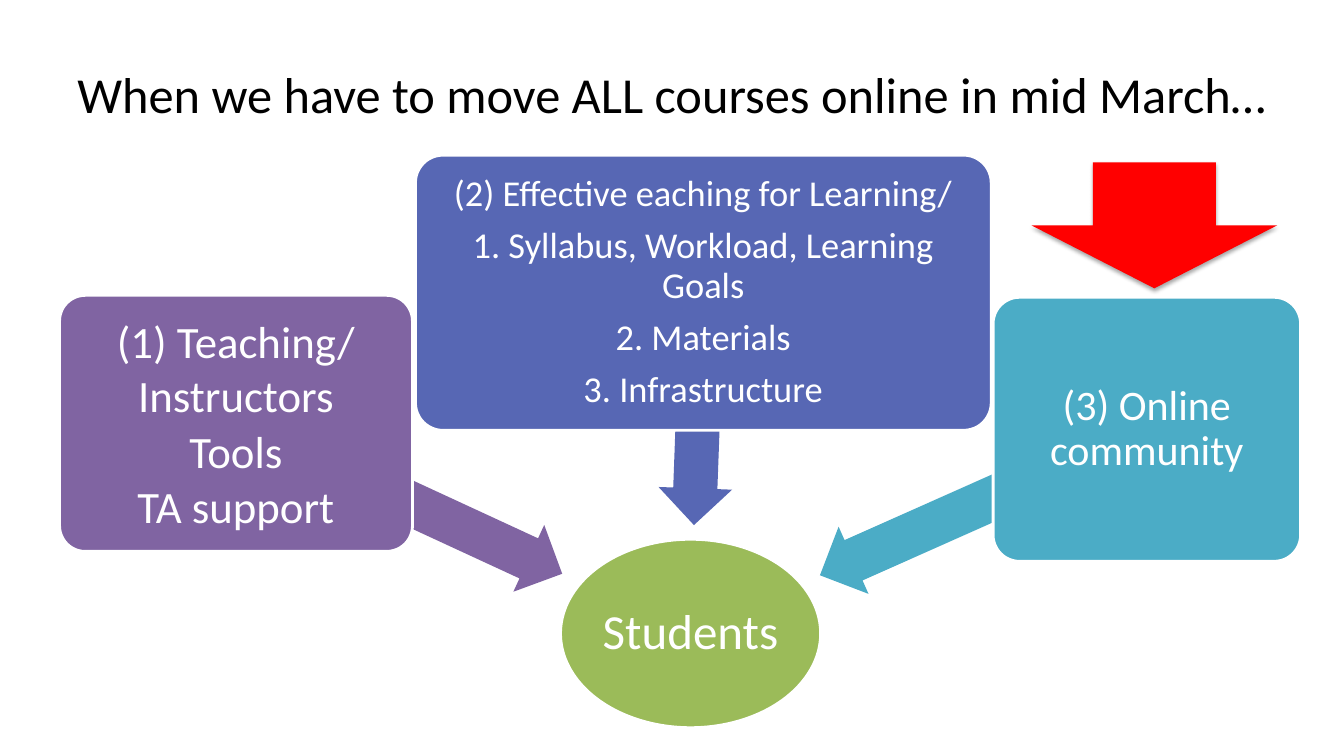
from lxml.etree import SubElement
from pptx import Presentation
from pptx.dml.color import RGBColor
from pptx.enum.shapes import MSO_SHAPE
from pptx.enum.text import MSO_ANCHOR, PP_ALIGN
from pptx.oxml.ns import qn
from pptx.util import Inches, Pt

WIDTH, HEIGHT = Inches(13.33), Inches(7.5)
FONT = "Calibri"
WHITE, BLACK, RED = "FFFFFF", "000000", "FF0000"
PURPLE, INDIGO, TEAL, GREEN = "8064A2", "5767B4", "4BACC6", "9BBB59"


def color(code):
    return RGBColor.from_string(code)


def shares(left, top, width, height):
    return (int(WIDTH * left / 100), int(HEIGHT * top / 100),
            int(WIDTH * width / 100), int(HEIGHT * height / 100))


def write(frame, lines, size, ink=WHITE, inset=0.05, spacing=None, after=None):
    frame.word_wrap = True
    frame.vertical_anchor = MSO_ANCHOR.MIDDLE
    frame.margin_left = frame.margin_right = Inches(inset)
    frame.margin_top = frame.margin_bottom = Inches(inset)
    for index, line in enumerate(lines):
        para = frame.add_paragraph() if index else frame.paragraphs[0]
        para.alignment = PP_ALIGN.CENTER
        para.line_spacing = spacing
        para.space_after = None if after is None else Pt(after)
        span = para.add_run()
        span.text = line
        span.font.name = FONT
        span.font.size = Pt(size)
        span.font.color.rgb = color(ink)


def add_figure(page, kind, area, fill, outline=None):
    figure = page.shapes.add_shape(kind, *shares(*area))
    figure.shadow.inherit = False
    figure.fill.solid()
    figure.fill.fore_color.rgb = color(fill)
    if outline:
        figure.line.color.rgb = color(outline)
        figure.line.width = Pt(2)
    else:
        figure.line.fill.background()
    return figure


def add_topic(page, area, fill, lines, size, **layout):
    box = add_figure(page, MSO_SHAPE.ROUNDED_RECTANGLE, area, fill, WHITE)
    box.adjustments[0] = 0.1
    write(box.text_frame, lines, size, **layout)


def add_flow(page, area, fill, angle):
    arrow = add_figure(page, MSO_SHAPE.LEFT_ARROW, area, fill)
    arrow.adjustments[0] = 0.6
    arrow.adjustments[1] = 0.5
    arrow.rotation = angle


def add_soft_shadow(figure):
    effects = figure.fill._xPr.find(qn("a:effectLst"))
    shadow = SubElement(effects, qn("a:outerShdw"), blurRad=str(Pt(3.1)),
                        dist=str(Pt(1.8)), dir="5400000", rotWithShape="0")
    tint = SubElement(shadow, qn("a:srgbClr"), val=BLACK)
    SubElement(tint, qn("a:alpha"), val="35000")


def main():
    deck = Presentation()
    deck.slide_width, deck.slide_height = WIDTH, HEIGHT
    page = deck.slides.add_slide(deck.slide_layouts[5])

    title = page.shapes.title
    title.left, title.top, title.width, title.height = shares(5, 4, 90, 16.67)
    write(title.text_frame,
          ["When we have to move ALL courses online in mid March…"], 36, ink=BLACK)

    students = add_figure(page, MSO_SHAPE.OVAL, (41.71, 71.33, 19.35, 24.93),
                          GREEN, WHITE)
    write(students.text_frame, ["Students"], 35, inset=0.02, spacing=0.9, after=12.25)

    add_flow(page, (16.35, 61.07, 26.71, 9.73), PURPLE, 204.8)
    add_topic(page, (4.43, 39.07, 26.26, 33.87), PURPLE,
              ["(1) Teaching/ Instructors", "Tools", "TA support"],
              32, inset=0.07, after=1.4)

    add_flow(page, (43.29, 49.2, 17.33, 9.73), INDIGO, 272.1)
    add_topic(page, (30.91, 20.53, 42.84, 36.4), INDIGO,
              ["(2) Effective eaching for Learning/",
               "1. Syllabus, Workload, Learning Goals",
               "2. Materials", "3. Infrastructure"],
              26, spacing=0.9, after=9.1)

    add_flow(page, (59.86, 61.6, 26.63, 9.73), TEAL, 336)
    add_topic(page, (73.89, 39.33, 22.88, 34.93), TEAL,
              ["(3) Online community"], 30, inset=0.06, spacing=0.9, after=10.5)

    pointer = add_figure(page, MSO_SHAPE.DOWN_ARROW, (76.74, 21.47, 18.3, 16.67), RED)
    add_soft_shadow(pointer)

    deck.save("out.pptx")


if __name__ == "__main__":
    main()
